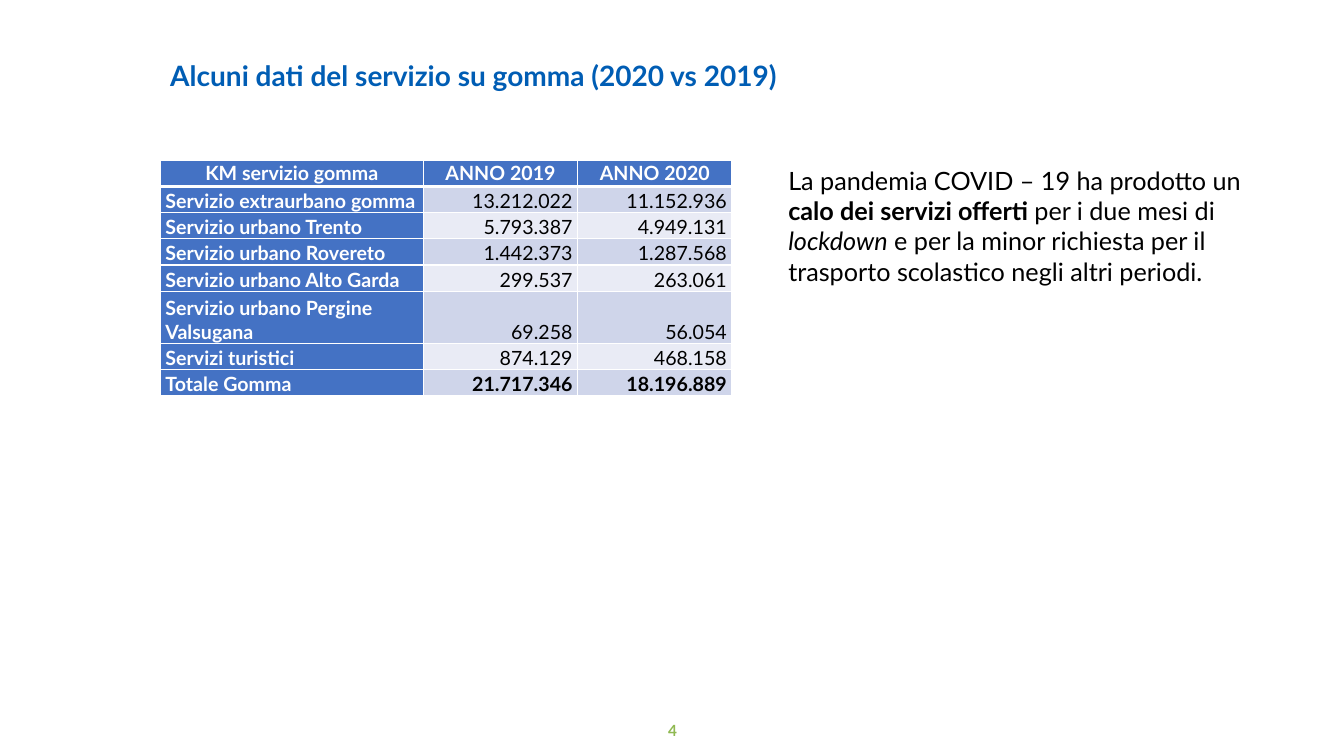
from dataclasses import dataclass

from lxml import etree
from pptx import Presentation
from pptx.dml.color import RGBColor
from pptx.enum import text
from pptx.oxml import ns
from pptx.util import Inches, Pt

COLORS = {
    "title": "005DB4",
    "number": "90B952",
    "header": "4472C4",
    "band_dark": "CFD5EA",
    "band_light": "E9EBF5",
    "white": "FFFFFF",
    "black": "000000",
}
FONT = "Lato"
LEFT, CENTER, RIGHT = text.PP_ALIGN.LEFT, text.PP_ALIGN.CENTER, text.PP_ALIGN.RIGHT


@dataclass(frozen=True)
class Phrase:
    content: str
    bold: bool = False
    italic: bool = False


@dataclass(frozen=True)
class TextBlock:
    left: float
    top: float
    width: float
    height: float
    size: float
    color: str
    phrases: tuple[Phrase, ...]
    align: text.PP_ALIGN = LEFT
    line_spacing: float = 1.0


@dataclass(frozen=True)
class ServiceRow:
    label: str
    km_2019: str
    km_2020: str
    height: float = 0.26


TEXT_BLOCKS = (
    TextBlock(3.33, 7.1, 6.68, 0.29, 11, "number", (Phrase("4", bold=True),), CENTER),
    TextBlock(1.59, 0.57, 6.47, 0.43, 20, "title",
              (Phrase("Alcuni dati del servizio su gomma (2020 vs 2019)", bold=True),),
              line_spacing=0.9),
    TextBlock(7.72, 1.59, 4.88, 1.62, 18, "black", (
        Phrase("La pandemia COVID – 19 ha prodotto un "),
        Phrase("calo dei servizi offerti ", bold=True),
        Phrase("per i due mesi di "),
        Phrase("lockdown", italic=True),
        Phrase(" e per la minor richiesta per il trasporto scolastico negli altri periodi."),
    )),
)

COLUMN_WIDTHS = (2.61, 1.53, 1.53)
SERVICE_ROWS = (
    ServiceRow("KM servizio gomma", "ANNO 2019", "ANNO 2020"),
    ServiceRow("Servizio extraurbano gomma", "13.212.022", "11.152.936"),
    ServiceRow("Servizio urbano Trento", "5.793.387", "4.949.131"),
    ServiceRow("Servizio urbano Rovereto", "1.442.373", "1.287.568"),
    ServiceRow("Servizio urbano Alto Garda", "299.537", "263.061"),
    ServiceRow("Servizio urbano Pergine Valsugana", "69.258", "56.054", 0.52),
    ServiceRow("Servizi turistici", "874.129", "468.158"),
    ServiceRow("Totale Gomma", "21.717.346", "18.196.889"),
)


def rgb(name: str) -> RGBColor:
    return RGBColor.from_string(COLORS[name])


def add_run(paragraph, phrase: Phrase, size: float, color: str) -> None:
    run = paragraph.add_run()
    run.text = phrase.content
    run.font.name = FONT
    run.font.size = Pt(size)
    run.font.bold = phrase.bold
    run.font.italic = phrase.italic
    run.font.color.rgb = rgb(color)


def add_text_block(slide, block: TextBlock) -> None:
    box = slide.shapes.add_textbox(Inches(block.left), Inches(block.top),
                                   Inches(block.width), Inches(block.height))
    box.text_frame.word_wrap = True
    paragraph = box.text_frame.paragraphs[0]
    paragraph.alignment = block.align
    paragraph.line_spacing = block.line_spacing
    for phrase in block.phrases:
        add_run(paragraph, phrase, block.size, block.color)


def add_cell_borders(cell, top: float, bottom: float) -> None:
    """Draw white borders; top and bottom are widths in points."""
    properties = cell._tc.get_or_add_tcPr()
    for side, width in (("L", 1), ("R", 1), ("T", top), ("B", bottom)):
        line = etree.SubElement(properties, ns.qn(f"a:ln{side}"), w=str(Pt(width)))
        fill = etree.SubElement(line, ns.qn("a:solidFill"))
        etree.SubElement(fill, ns.qn("a:srgbClr"), val=COLORS["white"])


def fill_cell(cell, content: str, row: int, column: int) -> None:
    is_header, is_label = row == 0, column == 0
    is_total = row == len(SERVICE_ROWS) - 1
    on_blue = is_header or is_label
    band = "band_dark" if row % 2 else "band_light"

    add_cell_borders(cell, top=3 if row == 1 else 1, bottom=3 if is_header else 1)
    cell.fill.solid()
    cell.fill.fore_color.rgb = rgb("header" if on_blue else band)
    cell.margin_left = cell.margin_right = Inches(0.05)
    cell.margin_top = cell.margin_bottom = 0
    cell.vertical_anchor = text.MSO_ANCHOR.MIDDLE if is_header else text.MSO_ANCHOR.BOTTOM

    paragraph = cell.text_frame.paragraphs[0]
    paragraph.alignment = CENTER if is_header else LEFT if is_label else RIGHT
    add_run(paragraph, Phrase(content, bold=on_blue or is_total), 14,
            "white" if on_blue else "black")


def add_service_table(slide) -> None:
    total_height = sum(row.height for row in SERVICE_ROWS)
    table = slide.shapes.add_table(
        len(SERVICE_ROWS), len(COLUMN_WIDTHS), Inches(1.59), Inches(1.59),
        Inches(sum(COLUMN_WIDTHS)), Inches(total_height)).table
    for column, width in zip(table.columns, COLUMN_WIDTHS):
        column.width = Inches(width)
    for row_index, row in enumerate(SERVICE_ROWS):
        table.rows[row_index].height = Inches(row.height)
        for column_index, content in enumerate((row.label, row.km_2019, row.km_2020)):
            fill_cell(table.cell(row_index, column_index), content, row_index, column_index)


def main() -> None:
    presentation = Presentation()
    presentation.slide_width = Inches(13.33)
    presentation.slide_height = Inches(7.5)
    slide = presentation.slides.add_slide(presentation.slide_layouts[6])
    for block in TEXT_BLOCKS:
        add_text_block(slide, block)
    add_service_table(slide)
    presentation.save("out.pptx")


if __name__ == "__main__":
    main()
